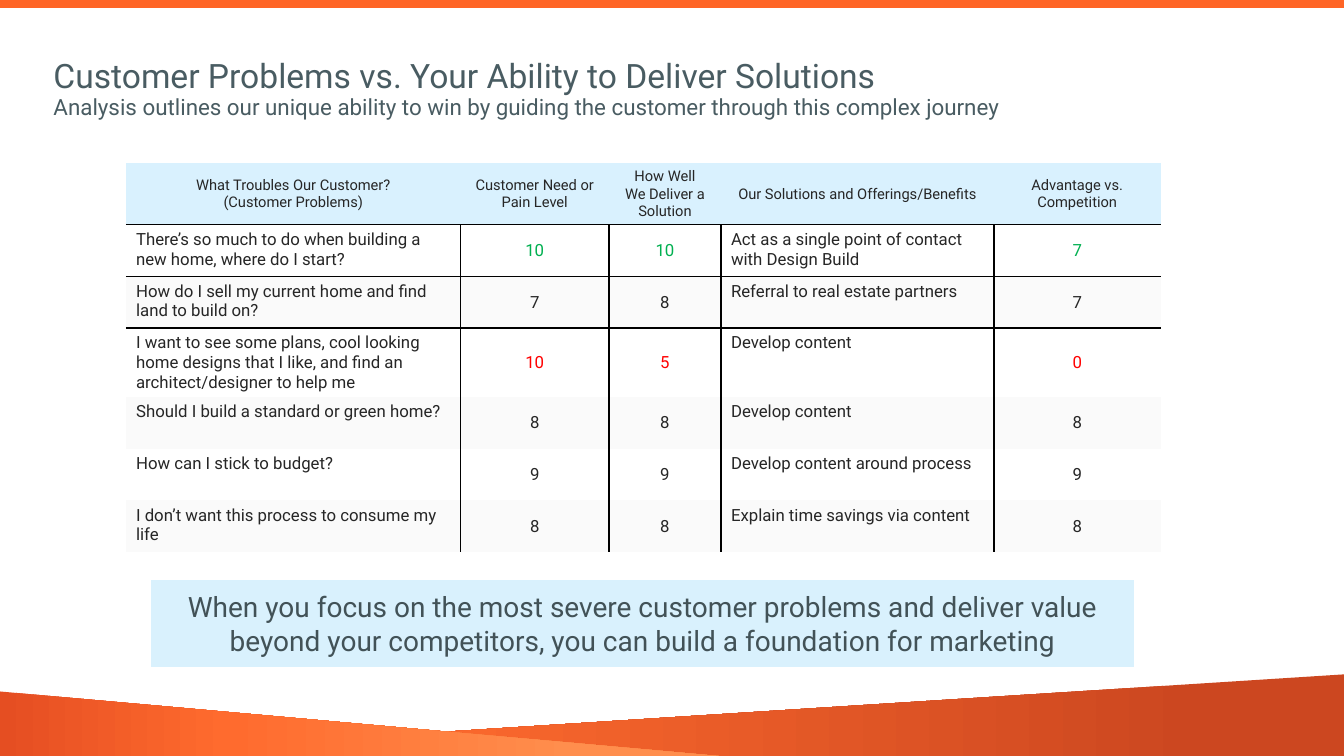
from lxml.etree import SubElement
from pptx import Presentation
from pptx.dml.color import RGBColor
from pptx.enum.shapes import MSO_CONNECTOR, MSO_SHAPE
from pptx.enum.text import MSO_ANCHOR, PP_ALIGN
from pptx.oxml.ns import qn
from pptx.util import Pt

FONT = "Roboto"
COLORS = {
    "background": "FFFFFF", "top_rule": "FF6526", "title": "495C62",
    "header": "D9F1FE", "band": "FAFAFA", "grid": "000000", "text": "262626",
    "strong": "00B050", "weak": "FF0000",
    "banner": "D9F1FD", "banner_text": "425257",
}
RIGHT_WEDGE = [(11, "CC4720"), (73, "FF6B2E"), (100, "FF8E4D")]
LEFT_WEDGE = [(0, "E54E22"), (30, "FF6B2E"), (75, "FF8E4D")]

TITLE = "Customer Problems vs. Your Ability to Deliver Solutions"
SUBTITLE = ("Analysis outlines our unique ability to win by guiding "
            "the customer through this complex journey")
BANNER = ("When you focus on the most severe customer problems and deliver value "
          "beyond your competitors, you can build a foundation for marketing")

COLUMN_WIDTHS = [239, 106, 80, 195, 119]
ROW_HEIGHTS = [43.5, 36.9, 36.9, 49.2, 36.9, 36.9, 36.9]
SCORE_COLUMNS = (1, 2, 4)
ROW_COLORS = {1: "strong", 3: "weak"}
ROWS = [
    ["What Troubles Our Customer?\n(Customer Problems)",
     "Customer Need or\nPain Level", "How Well\nWe Deliver a\nSolution",
     "Our Solutions and Offerings/Benefits", "Advantage vs. Competition"],
    ["There’s so much to do when building a new home, where do I start?",
     "10", "10", "Act as a single point of contact with Design Build", "7"],
    ["How do I sell my current home and find land to build on?",
     "7", "8", "Referral to real estate partners", "7"],
    ["I want to see some plans, cool looking home designs that I like, "
     "and find an architect/designer to help me",
     "10", "5", "Develop content", "0"],
    ["Should I build a standard or green home?", "8", "8", "Develop content", "8"],
    ["How can I stick to budget?", "9", "9", "Develop content around process", "9"],
    ["I don’t want this process to consume my life",
     "8", "8", "Explain time savings via content", "8"],
]


def rgb(name):
    return RGBColor.from_string(COLORS[name])


def format_run(run, size, color):
    run.font.name = FONT
    run.font.size = Pt(size)
    run.font.color.rgb = rgb(color)


def format_text(text_frame, size, color, alignment):
    for paragraph in text_frame.paragraphs:
        paragraph.alignment = alignment
        for run in paragraph.runs:
            format_run(run, size, color)


def add_plain_shape(slide, kind, left, top, width, height):
    shape = slide.shapes.add_shape(kind, Pt(left), Pt(top), Pt(width), Pt(height))
    shape.shadow.inherit = False
    shape.line.fill.background()
    return shape


def add_wedge(slide, top, width, height, stops, flipped=False):
    wedge = add_plain_shape(slide, MSO_SHAPE.RIGHT_TRIANGLE, 0, top, width, height)
    wedge.fill.gradient()
    wedge.fill.gradient_angle = 0
    properties = wedge._element.spPr
    stop_list = properties.find(qn("a:gradFill")).find(qn("a:gsLst"))
    stop_list.clear()
    for position, color in stops:
        stop = SubElement(stop_list, qn("a:gs"), pos=str(position * 1000))
        SubElement(stop, qn("a:srgbClr"), val=color)
    if flipped:
        properties.find(qn("a:xfrm")).set("flipH", "1")


def add_top_rule(slide):
    rule = slide.shapes.add_connector(
        MSO_CONNECTOR.STRAIGHT, Pt(0), Pt(3), Pt(960), Pt(3))
    rule.line.color.rgb = rgb("top_rule")
    rule.line.width = Pt(6)
    SubElement(rule._element.spPr, qn("a:effectLst"))


def add_title(slide):
    title = slide.shapes.title
    title.left, title.top, title.width, title.height = Pt(31), Pt(12.2), Pt(828), Pt(104.4)
    text_frame = title.text_frame
    text_frame.text = f"{TITLE}\v{SUBTITLE}"
    text_frame.word_wrap = True
    text_frame.vertical_anchor = MSO_ANCHOR.MIDDLE
    paragraph = text_frame.paragraphs[0]
    paragraph.alignment = PP_ALIGN.LEFT
    paragraph.line_spacing = 0.9
    for run, size in zip(paragraph.runs, (24, 16)):
        format_run(run, size, "title")


def add_border(cell, side):
    line = SubElement(cell._tc.get_or_add_tcPr(), qn(f"a:ln{side}"), w=str(Pt(1)))
    fill = SubElement(line, qn("a:solidFill"))
    SubElement(fill, qn("a:srgbClr"), val=COLORS["grid"])


def border_sides(row, column):
    """Sides in the order the schema asks for: L, R, T, B."""
    last = len(COLUMN_WIDTHS) - 1
    return [side for side, shown in (
        ("L", row > 0 and column > 0),
        ("R", row > 0 and column < last),
        ("T", row in (1, 2)),
        ("B", row in (0, 1)),
    ) if shown]


def fill_cell(cell, row, column, text):
    is_header, is_score = row == 0, column in SCORE_COLUMNS
    centered = is_header or is_score
    cell.text_frame.text = text
    cell.vertical_anchor = MSO_ANCHOR.MIDDLE if centered else MSO_ANCHOR.TOP
    color = ROW_COLORS.get(row, "text") if is_score else "text"
    format_text(cell.text_frame, 10.5 if is_header else 12, color,
                PP_ALIGN.CENTER if centered else PP_ALIGN.LEFT)
    for side in border_sides(row, column):
        add_border(cell, side)
    if is_header or row % 2 == 0:
        cell.fill.solid()
        cell.fill.fore_color.rgb = rgb("header" if is_header else "band")
    else:
        cell.fill.background()


def add_problem_table(slide):
    frame = slide.shapes.add_table(
        len(ROWS), len(COLUMN_WIDTHS), Pt(90), Pt(116.6),
        Pt(sum(COLUMN_WIDTHS)), Pt(sum(ROW_HEIGHTS)))
    table = frame.table
    table.horz_banding = False
    table.first_row = False
    # "No Style, No Grid" leaves only the borders set on the cells
    style = table._tbl.tblPr.find(qn("a:tableStyleId"))
    style.text = "{2D5ABB26-0587-4C30-8999-92F81FD0307C}"
    for column, width in zip(table.columns, COLUMN_WIDTHS):
        column.width = Pt(width)
    for row, height in zip(table.rows, ROW_HEIGHTS):
        row.height = Pt(height)
    for row, texts in enumerate(ROWS):
        for column, text in enumerate(texts):
            fill_cell(table.cell(row, column), row, column, text)


def add_banner(slide):
    banner = add_plain_shape(slide, MSO_SHAPE.RECTANGLE, 108, 414.4, 702, 62)
    banner.fill.solid()
    banner.fill.fore_color.rgb = rgb("banner")
    text_frame = banner.text_frame
    text_frame.text = BANNER
    text_frame.word_wrap = True
    text_frame.vertical_anchor = MSO_ANCHOR.MIDDLE
    format_text(text_frame, 20, "banner_text", PP_ALIGN.CENTER)


def main():
    presentation = Presentation()
    presentation.slide_width, presentation.slide_height = Pt(960), Pt(540)
    slide = presentation.slides.add_slide(presentation.slide_layouts[5])
    slide.background.fill.solid()
    slide.background.fill.fore_color.rgb = rgb("background")

    # Frame of the page
    add_wedge(slide, 481.7, 960, 61.2, RIGHT_WEDGE, flipped=True)
    add_wedge(slide, 493.9, 545.8, 49, LEFT_WEDGE)
    add_top_rule(slide)

    # Content
    add_title(slide)
    add_problem_table(slide)
    add_banner(slide)
    presentation.save("out.pptx")


if __name__ == "__main__":
    main()
